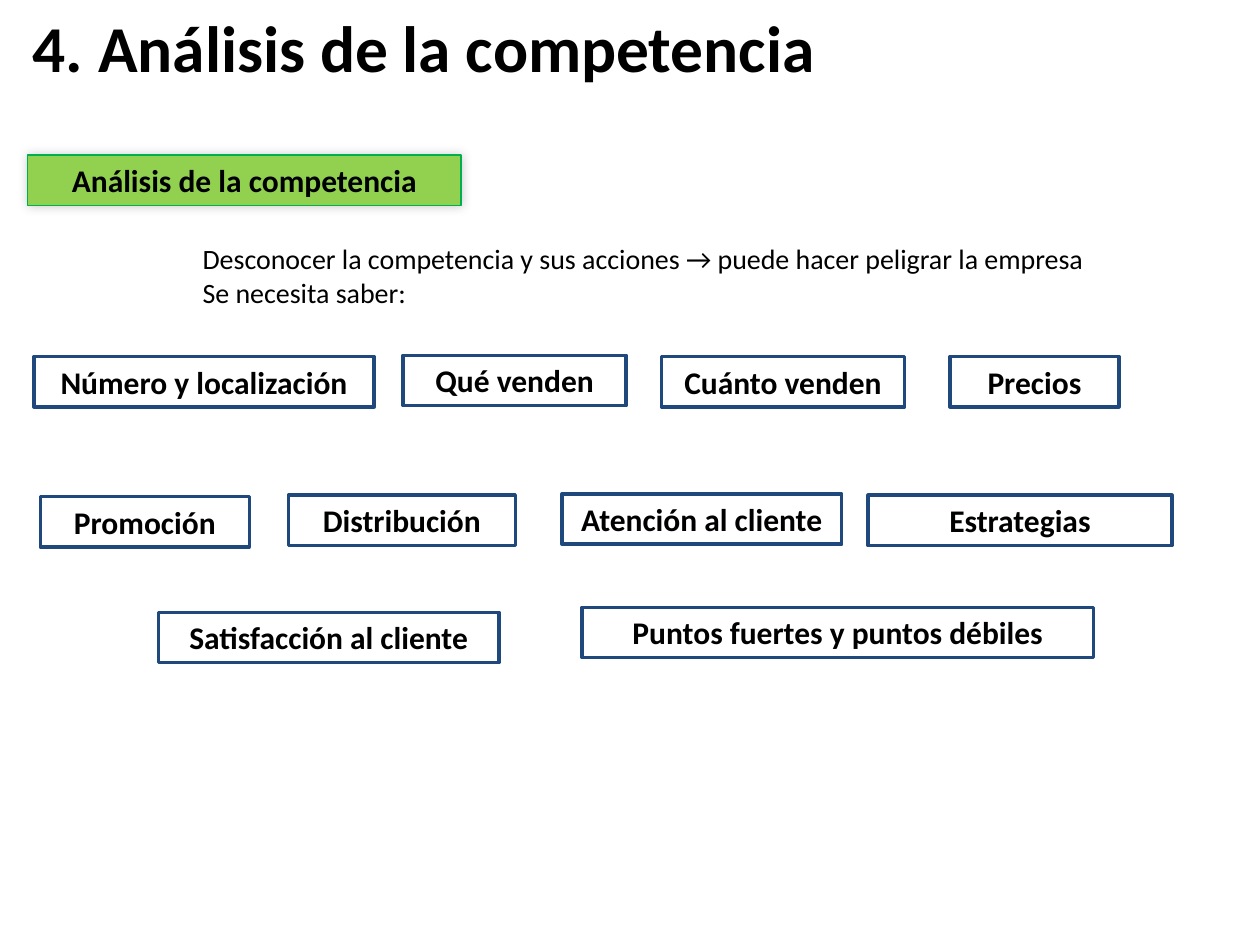
from lxml import etree
from pptx import Presentation, util as u
from pptx.dml import color
from pptx.enum import shapes, text
from pptx.oxml import ns

COLORS = {"text": "000000", "border": "1F497D", "green": "92D050", "edge": "00B050"}
ROW_HEIGHT = 0.4


def write(shape, lines, align, anchor, **format_values):
    frame = shape.text_frame
    frame.word_wrap = True
    frame.vertical_anchor = anchor
    for index, line in enumerate(lines):
        para = frame.paragraphs[0] if index == 0 else frame.add_paragraph()
        para.alignment = align
        span = para.add_run()
        span.text = line
        span.font.color.rgb = color.RGBColor.from_string(COLORS["text"])
        for name, value in {"name": "Calibri", **format_values}.items():
            setattr(span.font, name, value)


def add_label(label, left, top, width, line_color, line_width):
    box = page.shapes.add_shape(
        shapes.MSO_SHAPE.RECTANGLE,
        u.Inches(left), u.Inches(top), u.Inches(width), u.Inches(ROW_HEIGHT),
    )
    box.shadow.inherit = False
    box.fill.background()
    box.line.color.rgb = color.RGBColor.from_string(COLORS[line_color])
    box.line.width = u.Pt(line_width)
    write(box, [label], text.PP_ALIGN.CENTER, text.MSO_ANCHOR.TOP, size=u.Pt(18), bold=True)
    box.text_frame.auto_size = text.MSO_AUTO_SIZE.SHAPE_TO_FIT_TEXT
    return box


deck = Presentation()
deck.slide_width = u.Inches(10)
deck.slide_height = u.Inches(7.5)
page = deck.slides.add_slide(deck.slide_layouts[5])

title = page.shapes.title
title.left, title.top = u.Inches(0.16), u.Inches(0.05)
title.width, title.height = u.Inches(9.42), u.Inches(0.63)
write(title, ["4. Análisis de la competencia"], text.PP_ALIGN.LEFT,
      text.MSO_ANCHOR.MIDDLE, size=u.Pt(37.4), bold=True)
title.text_frame.auto_size = text.MSO_AUTO_SIZE.NONE

heading = add_label("Análisis de la competencia", 0.22, 1.23, 3.44, "edge", 0.75)
heading.fill.solid()
heading.fill.fore_color.rgb = color.RGBColor.from_string(COLORS["green"])
effects = heading.fill._xPr.find(ns.qn("a:effectLst"))
shadow = etree.SubElement(effects, ns.qn("a:outerShdw"),
                          blurRad=str(u.Pt(6)), dist="0", dir=str(225 * 60000))
shade = etree.SubElement(shadow, ns.qn("a:srgbClr"), val=COLORS["text"])
etree.SubElement(shade, ns.qn("a:alpha"), val="20000")

intro = page.shapes.add_textbox(u.Inches(1.51), u.Inches(1.87), u.Inches(7.37), u.Inches(0.64))
write(intro, [
    "Desconocer la competencia y sus acciones → puede hacer peligrar la empresa",
    "Se necesita saber:",
], text.PP_ALIGN.LEFT, text.MSO_ANCHOR.TOP, size=u.Pt(16))
intro.text_frame.auto_size = text.MSO_AUTO_SIZE.SHAPE_TO_FIT_TEXT

topics = [
    ("Número y localización", 0.27, 2.83, 2.7),
    ("Qué venden", 3.2, 2.82, 1.77),
    ("Cuánto venden", 5.25, 2.83, 1.93),
    ("Precios", 7.54, 2.83, 1.34),
    ("Promoción", 0.32, 3.94, 1.66),
    ("Distribución", 2.29, 3.93, 1.8),
    ("Atención al cliente", 4.46, 3.92, 2.22),
    ("Estrategias", 6.89, 3.93, 2.41),
    ("Satisfacción al cliente", 1.26, 4.86, 2.7),
    ("Puntos fuertes y puntos débiles", 4.62, 4.82, 4.06),
]
for label, left, top, width in topics:
    add_label(label, left, top, width, "border", 2)

deck.save("out.pptx")
